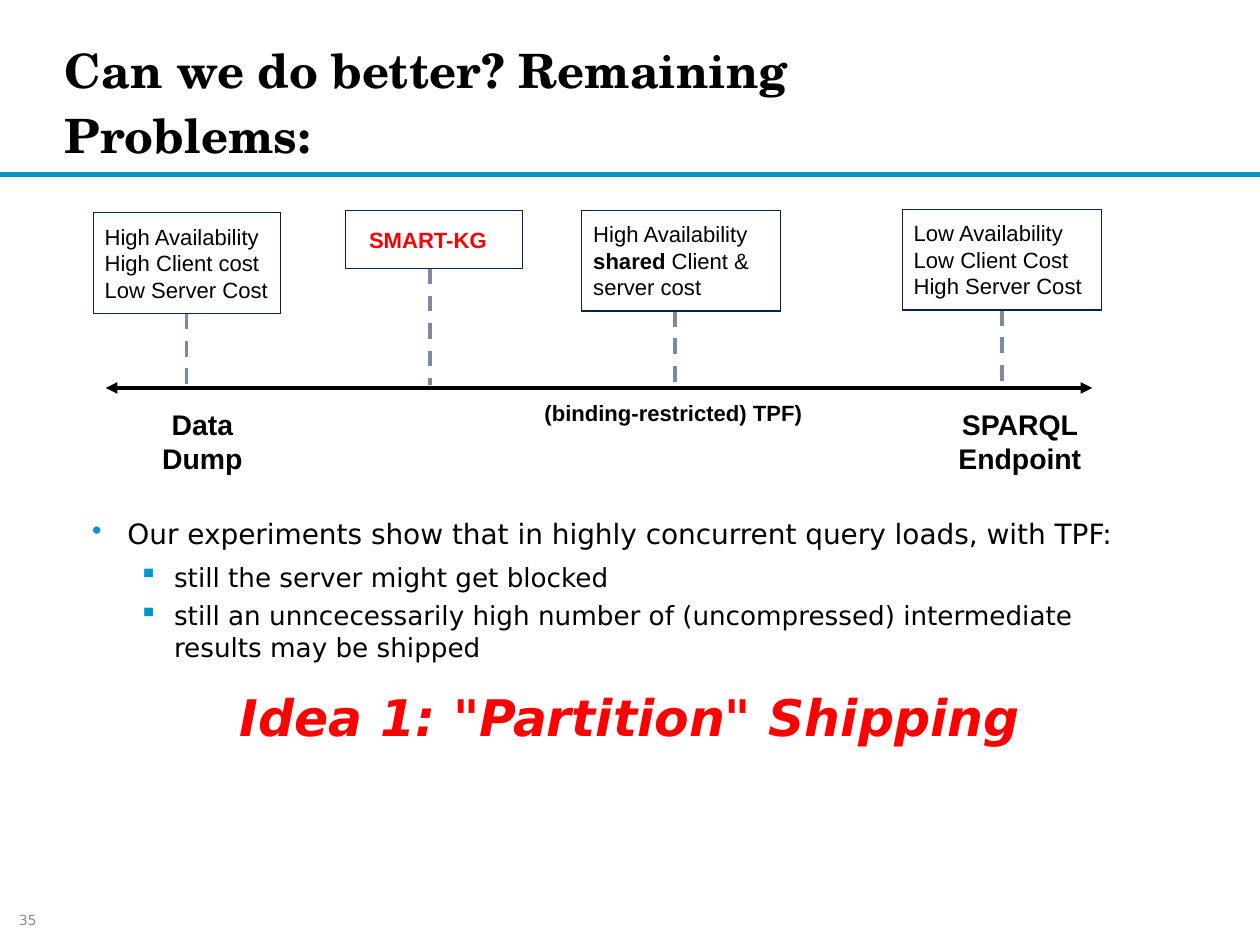
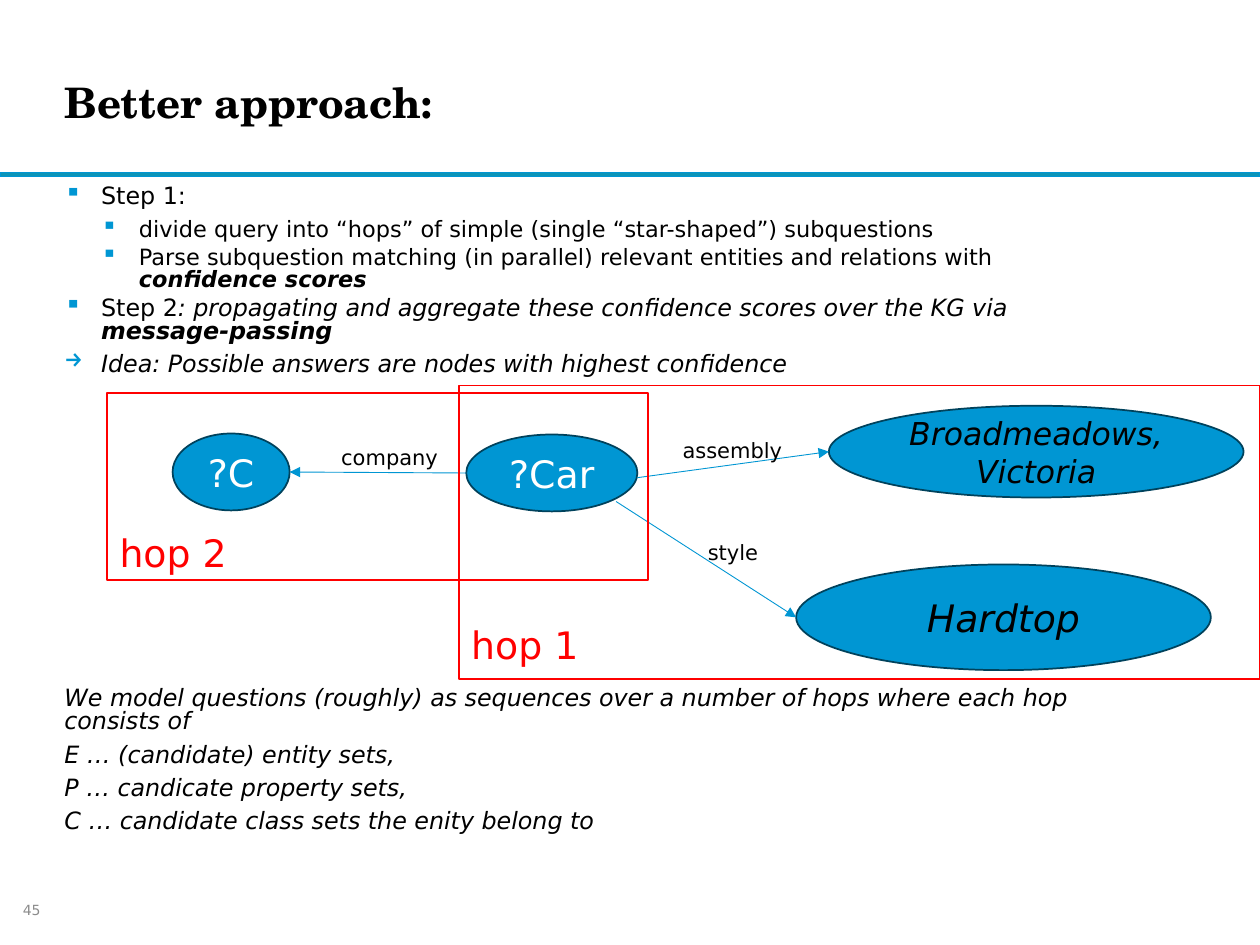
import pptx
import pptx.dml.color
import pptx.enum.dml
import pptx.enum.shapes
import pptx.enum.text
import pptx.oxml.ns
import pptx.util
from lxml import etree

Cm = pptx.util.Cm
Pt = pptx.util.Pt
RGBColor = pptx.dml.color.RGBColor
ALIGN = pptx.enum.text.PP_ALIGN
ANCHOR = pptx.enum.text.MSO_ANCHOR
SHAPE = pptx.enum.shapes.MSO_SHAPE

BLACK = RGBColor(0x00, 0x00, 0x00)
WHITE = RGBColor(0xFF, 0xFF, 0xFF)
RED = RGBColor(0xFF, 0x00, 0x00)
BLUE = RGBColor(0x00, 0x96, 0xD3)
BAND_BLUE = RGBColor(0x0C, 0x94, 0xB7)
NODE_EDGE = RGBColor(0x00, 0x42, 0x5C)
NOTE_EDGE = RGBColor(0x00, 0x23, 0x50)
STEM_GREY = RGBColor(0x7A, 0x8A, 0xA6)
NUMBER_GREY = RGBColor(0x8C, 0x8C, 0x8C)

SERIF = "TeX Gyre Schola"
SANS = "DejaVu Sans"
ARIAL = "Arial"

BODY_MARGINS = (0, 0.13, 0, 0.13)
NOTE_MARGINS = (0.23, 0.23, 0.23, 0.23)
LABEL_MARGINS = (0.23, 0.1, 0.23, 0.1)
DEFAULT_MARGINS = (0.25, 0.13, 0.25, 0.13)


def shifted(origin, box):
    """Move a point or box given relative to the origin of a region."""
    return (origin[0] + box[0], origin[1] + box[1], *box[2:])


def lengths(box):
    return [Cm(value) for value in box]


def left_middle(box):
    return box[0], box[1] + box[3] / 2


def right_middle(box):
    return box[0] + box[2], box[1] + box[3] / 2


def add_xml(parent, tag, **attributes):
    return etree.SubElement(parent, pptx.oxml.ns.qn(tag), attributes)


def add_bullet(paragraph, character, indent, hanging):
    properties = paragraph._p.get_or_add_pPr()
    properties.set("marL", str(Cm(indent)))
    properties.set("indent", str(-Cm(hanging)))
    color = add_xml(properties, "a:buClr")
    add_xml(color, "a:srgbClr", val=str(BLUE))
    add_xml(properties, "a:buChar", char=character)


def write(shape, paragraphs, margins=DEFAULT_MARGINS, anchor=ANCHOR.TOP, wrap=True, **style):
    """Fill a shape; a paragraph is a text or (runs, style), a run a text or (text, style)."""
    frame = shape.text_frame
    frame.auto_size = pptx.enum.text.MSO_AUTO_SIZE.NONE
    frame.word_wrap = wrap
    frame.vertical_anchor = anchor
    (frame.margin_left, frame.margin_top,
     frame.margin_right, frame.margin_bottom) = lengths(margins)
    for index, entry in enumerate(paragraphs):
        runs, changes = ([entry], {}) if isinstance(entry, str) else entry
        format_ = {**style, **changes}
        paragraph = frame.paragraphs[0] if index == 0 else frame.add_paragraph()
        if "bullet" in format_:
            add_bullet(paragraph, *format_["bullet"])
        paragraph.alignment = format_.get("align", ALIGN.LEFT)
        paragraph.line_spacing = format_.get("spacing", 1.0)
        paragraph.space_before = Pt(0)
        paragraph.space_after = Pt(format_.get("after", 0))
        for piece in runs:
            text, run_changes = (piece, {}) if isinstance(piece, str) else piece
            run_format = {**format_, **run_changes}
            run = paragraph.add_run()
            run.text = text
            run.font.name = run_format.get("font", SANS)
            run.font.size = Pt(run_format["size"])
            run.font.color.rgb = run_format.get("color", BLACK)
            run.font.bold = run_format.get("bold", False)
            run.font.italic = run_format.get("italic", False)


def add_text(slide, box, paragraphs, **style):
    write(slide.shapes.add_textbox(*lengths(box)), paragraphs, **style)


def add_box(slide, kind, box, edge, width=1.0, fill=None):
    shape = slide.shapes.add_shape(kind, *lengths(box))
    shape.shadow.inherit = False
    if fill is None:
        shape.fill.background()
    else:
        shape.fill.solid()
        shape.fill.fore_color.rgb = fill
    shape.line.color.rgb = edge
    shape.line.width = Pt(width)
    return shape


def add_line(slide, start, end, color, width, dashed=False, arrows=()):
    """Draw a line; arrows names the ends that get a triangle."""
    straight = pptx.enum.shapes.MSO_CONNECTOR.STRAIGHT
    line = slide.shapes.add_connector(straight, *lengths((*start, *end)))
    line.line.color.rgb = color
    line.line.width = Pt(width)
    if dashed:
        line.line.dash_style = pptx.enum.dml.MSO_LINE.DASH
    for arrow in arrows:
        add_xml(line.line._get_or_add_ln(), arrow, type="triangle")
    add_xml(line._element.spPr, "a:effectLst")


def add_base_slide(presentation, title, title_size, number, number_box):
    """Add a slide with the band, title and slide number that all slides share."""
    slide = presentation.slides.add_slide(presentation.slide_layouts[5])
    add_box(slide, SHAPE.RECTANGLE, (0, 3.48, 25.4, 0.08), BLUE, fill=BAND_BLUE)
    heading = slide.shapes.title
    heading.left, heading.top, heading.width, heading.height = lengths((1.3, 0.46, 18.47, 3.02))
    write(heading, [title], margins=(0, 0, 0, 0), anchor=ANCHOR.MIDDLE,
          size=title_size, font=SERIF, bold=True, spacing=1.15)
    add_text(slide, number_box, [number], margins=BODY_MARGINS,
             anchor=ANCHOR.MIDDLE, size=8, color=NUMBER_GREY)
    return slide


def add_spectrum(slide, box):
    """Place the client-server axis with its notes, stems and labels."""
    axis_y = 3.62
    add_line(slide, shifted(box, (0.33, axis_y)), shifted(box, (box[2], axis_y)),
             BLACK, 2.25, arrows=("a:headEnd", "a:tailEnd"))
    shared_cost = ([("shared", {"bold": True}), " Client & server cost"], {})
    smart = (["SMART-KG"], {"color": RED, "bold": True})
    notes = [
        ((0.08, 0.09, 3.78, 2.03), 1.96,
         ["High Availability", "High Client cost", "Low Server Cost"]),
        ((5.16, 0.04, 3.58, 1.17), 6.86, [smart]),
        ((9.93, 0.04, 4.01, 2.03), 11.81, ["High Availability", shared_cost]),
        ((16.39, 0.02, 4.01, 2.03), 18.39,
         ["Low Availability", "Low Client Cost", "High Server Cost"]),
    ]
    for note_box, stem_x, lines in notes:
        bottom = note_box[1] + note_box[3]
        add_line(slide, shifted(box, (stem_x, bottom)), shifted(box, (stem_x, axis_y - 0.05)),
                 STEM_GREY, 2.25, dashed=True)
        note = add_box(slide, SHAPE.RECTANGLE, shifted(box, note_box), NOTE_EDGE, 0.75)
        margins = (0.48, *NOTE_MARGINS[1:]) if lines == [smart] else NOTE_MARGINS
        write(note, lines, margins=margins, anchor=ANCHOR.MIDDLE, size=12.6, font=ARIAL)
    for label_box, size, margins, lines in [
        ((0.03, 3.9, 4.5, 1.6), 16.2, LABEL_MARGINS, ["Data", "Dump"]),
        ((8.66, 3.62, 6.22, 1.17), 12.6, NOTE_MARGINS, ["(binding-restricted) TPF)"]),
        ((16.51, 3.9, 4.5, 1.6), 16.2, LABEL_MARGINS, ["SPARQL", "Endpoint"]),
    ]:
        add_text(slide, shifted(box, label_box), lines, margins=margins,
                 size=size, font=ARIAL, bold=True, align=ALIGN.CENTER)


def add_findings(slide, box):
    detail = {"bullet": ("▪", 2.24, 0.71), "size": 15, "after": 4}
    add_text(slide, box, [
        (["Our experiments show that in highly concurrent query loads, with TPF:"],
         {"bullet": ("•", 1.3, 0.71), "after": 6}),
        (["still the server might get blocked"], detail),
        (["still an unncecessarily high number of (uncompressed) intermediate "
          "results may be shipped"], detail),
    ], margins=BODY_MARGINS, size=16)


def add_steps(slide, box):
    step = {"bullet": ("▪", 0.74, 0.74)}
    detail = {"bullet": ("▪", 1.5, 0.76), "size": 12.8, "after": 4}
    italic = {"italic": True}
    strong = {"italic": True, "bold": True}
    add_text(slide, box, [
        (["Step 1:"], step),
        (["divide query into “hops” of simple (single “star-shaped”) subquestions"], detail),
        (["Parse subquestion matching (in parallel) relevant entities and relations with ",
          ("confidence scores", strong)], detail),
        (["Step 2",
          (": propagating and aggregate these confidence scores over the KG via ", italic),
          ("message-passing", strong)], step),
        (["Idea: Possible answers are nodes with highest confidence"],
         {"bullet": ("→", 0.74, 0.74), **italic}),
    ], margins=BODY_MARGINS, size=13.6, spacing=0.8, after=6)


def add_hop_graph(slide, box):
    """Place the query graph with its nodes, relations and hop frames."""
    company, car = (1.32, 0.97, 2.36, 1.55), (7.24, 0.99, 3.45, 1.55)
    place, style = (14.55, 0.41, 8.36, 1.85), (13.89, 3.61, 8.36, 2.13)
    for node_box, text, size, color, italic in [
        (company, "?C", 21.6, WHITE, False),
        (car, "?Car", 21.6, WHITE, False),
        (place, "Broadmeadows, Victoria", 18, BLACK, True),
        (style, "Hardtop", 21.6, BLACK, True),
    ]:
        node = add_box(slide, SHAPE.OVAL, shifted(box, node_box), NODE_EDGE, fill=BLUE)
        write(node, [text], anchor=ANCHOR.MIDDLE, align=ALIGN.CENTER,
              size=size, color=color, italic=italic)
    for start, end, text, label_box in [
        (left_middle(car), right_middle(company), "company", (4.47, 1.07, 2.46, 0.77)),
        ((10.69, 1.86), left_middle(place), "assembly", (11.35, 0.92, 2.51, 0.77)),
        ((10.26, 2.34), left_middle(style), "style", (11.86, 2.97, 1.52, 0.77)),
    ]:
        add_line(slide, shifted(box, start), shifted(box, end), BLUE, 0.5, arrows=("a:tailEnd",))
        add_text(slide, shifted(box, label_box), [text], size=12, wrap=False)
    for frame_box, text, label_top in [
        ((7.09, 0, 16.15, 5.92), "hop 1", 4.63),
        ((0, 0.15, 10.9, 3.78), "hop 2", 2.77),
    ]:
        add_box(slide, SHAPE.RECTANGLE, shifted(box, frame_box), RED)
        add_text(slide, shifted(box, (frame_box[0], label_top, 2.72, 1.17)), [text],
                 size=21.6, color=RED, wrap=False)


def add_model(slide, box):
    add_text(slide, box, [
        "We model questions (roughly) as sequences over a number of hops where each hop consists of",
        "E … (candidate) entity sets,",
        "P … candicate property sets,",
        "C … candidate class sets the enity belong to",
    ], margins=BODY_MARGINS, size=13.6, italic=True, spacing=0.8, after=6)


def add_problems_slide(presentation):
    slide = add_base_slide(presentation, "Can we do better? Remaining Problems:", 27,
                           "35", (0.38, 18.16, 5.72, 0.76))
    add_spectrum(slide, (1.8, 4.2, 20.22, 5.5))
    add_findings(slide, (1.27, 10.29, 21.56, 3.4))
    add_text(slide, (0.76, 13.61, 23.88, 2.29), ['Idea 1: "Partition" Shipping'],
             margins=NOTE_MARGINS, size=28.8, color=RED, bold=True, italic=True,
             align=ALIGN.CENTER)


def add_approach_slide(presentation):
    slide = add_base_slide(presentation, "Better approach:", 24,
                           "45", (0.46, 17.91, 5.41, 0.86))
    add_steps(slide, (1.3, 3.63, 21.56, 4.1))
    add_hop_graph(slide, (2.16, 7.77, 23.24, 5.92))
    add_model(slide, (1.3, 13.75, 21.56, 3.72))


def main():
    presentation = pptx.Presentation()
    presentation.slide_width, presentation.slide_height = lengths((25.4, 19.05))
    add_problems_slide(presentation)
    add_approach_slide(presentation)
    presentation.save("out.pptx")


if __name__ == "__main__":
    main()
